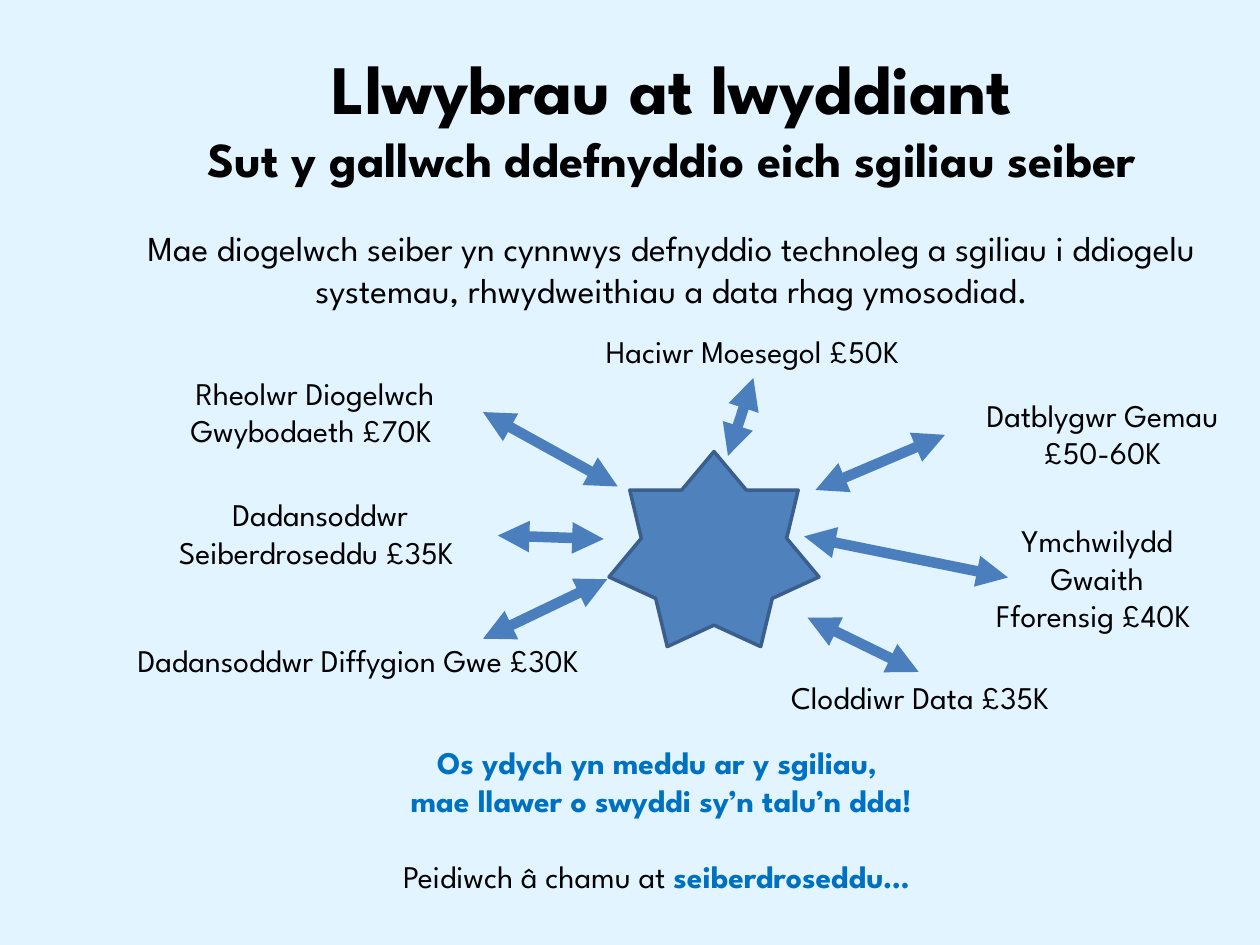
from dataclasses import dataclass

from lxml import etree
from pptx import Presentation
from pptx import util as u
from pptx.dml.color import RGBColor
from pptx.enum import shapes, text
from pptx.oxml import ns

FONT = "League Spartan"
BACKGROUND = RGBColor(0xE1, 0xF4, 0xFF)
BLACK = RGBColor(0, 0, 0)
ACCENT = RGBColor(0x00, 0x70, 0xC0)
STAR_FILL = RGBColor(0x4F, 0x81, 0xBD)
STAR_LINE = RGBColor(0x3A, 0x5F, 0x8C)
ARROW = RGBColor(0x4B, 0x7E, 0xBC)


@dataclass(frozen=True)
class Span:
    words: str
    size: float = 18
    color: RGBColor = BLACK
    bold: bool = False


@dataclass(frozen=True)
class Box:
    left: float
    top: float
    width: float
    height: float


@dataclass(frozen=True)
class Job:
    name: str
    box: Box


@dataclass(frozen=True)
class Arrow:
    x1: float
    y1: float
    x2: float
    y2: float


JOBS = [
    Job("Haciwr Moesegol £50K", Box(314.5, 186, 231, 29)),
    Job("Rheolwr Diogelwch Gwybodaeth £70K ", Box(84, 210, 192, 51)),
    Job("Dadansoddwr Seiberdroseddu £35K ", Box(78, 279.5, 210, 51)),
    Job("Dadansoddwr Diffygion Gwe £30K ", Box(60, 363, 294, 51)),
    Job("Cloddiwr Data £35K ", Box(426, 384, 204, 29)),
    Job("Ymchwilydd Gwaith Fforensig £40K ", Box(558, 294, 138, 73)),
    Job("Datblygwr Gemau £50-60K", Box(540, 222.5, 180, 51)),
]

ARROWS = [
    Arrow(430.5, 216, 416, 260.5),
    Arrow(353, 278, 276, 235.5),
    Arrow(345, 308, 284.5, 306),
    Arrow(276, 365, 347, 331),
    Arrow(525, 384, 461.5, 353),
    Arrow(576, 330, 459.5, 306.5),
    Arrow(540, 248.5, 466, 280),
]


def add_span(para, span: Span) -> None:
    run = para.add_run()
    run.text = span.words
    run.font.name = FONT
    run.font.size = u.Pt(span.size)
    run.font.bold = span.bold
    run.font.color.rgb = span.color


def add_text(page, box: Box, paras: list[list[Span]],
             anchor=text.MSO_ANCHOR.TOP) -> None:
    shape = page.shapes.add_textbox(
        u.Pt(box.left), u.Pt(box.top), u.Pt(box.width), u.Pt(box.height))
    frame = shape.text_frame
    frame.word_wrap = True
    frame.vertical_anchor = anchor
    for index, spans in enumerate(paras):
        para = frame.add_paragraph() if index else frame.paragraphs[0]
        para.alignment = text.PP_ALIGN.CENTER
        for span in spans:
            add_span(para, span)


def add_title(page, box: Box, lines: list[Span]) -> None:
    title = page.shapes.title
    title.left, title.top = u.Pt(box.left), u.Pt(box.top)
    title.width, title.height = u.Pt(box.width), u.Pt(box.height)
    frame = title.text_frame
    frame.auto_size = text.MSO_AUTO_SIZE.NONE
    frame.vertical_anchor = text.MSO_ANCHOR.MIDDLE
    para = frame.paragraphs[0]
    para.alignment = text.PP_ALIGN.CENTER
    for index, span in enumerate(lines):
        if index:
            para.add_line_break()
        add_span(para, span)


def add_star(page, box: Box) -> None:
    star = page.shapes.add_shape(
        shapes.MSO_SHAPE.STAR_7_POINT,
        u.Pt(box.left), u.Pt(box.top), u.Pt(box.width), u.Pt(box.height))
    star.shadow.inherit = False
    star.fill.solid()
    star.fill.fore_color.rgb = STAR_FILL
    star.line.color.rgb = STAR_LINE
    star.line.width = u.Pt(2)


def add_arrow(page, arrow: Arrow) -> None:
    line = page.shapes.add_connector(
        shapes.MSO_CONNECTOR.STRAIGHT,
        u.Pt(arrow.x1), u.Pt(arrow.y1), u.Pt(arrow.x2), u.Pt(arrow.y2))
    line.line.color.rgb = ARROW
    line.line.width = u.Pt(6)
    properties = line.line._get_or_add_ln()
    for end in ("a:headEnd", "a:tailEnd"):
        etree.SubElement(properties, ns.qn(end), type="triangle")
    etree.SubElement(line._element.spPr, ns.qn("a:effectLst"))


def main() -> None:
    deck = Presentation()
    deck.slide_width, deck.slide_height = u.Pt(720), u.Pt(540)
    page = deck.slides.add_slide(deck.slide_layouts.get_by_name("Title Only"))
    page.background.fill.solid()
    page.background.fill.fore_color.rgb = BACKGROUND

    add_title(page, Box(60, 21.5, 648, 90), [
        Span("Llwybrau at lwyddiant", 39.6, bold=True),
        Span("Sut y gallwch ddefnyddio eich sgiliau seiber", 27.9, bold=True),
    ])
    add_text(page, Box(60, 126, 648, 60), [[Span(
        "Mae diogelwch seiber yn cynnwys defnyddio technoleg a sgiliau i "
        "ddiogelu systemau, rhwydweithiau a data rhag ymosodiad.", 20)]])
    add_star(page, Box(348, 258, 120, 111.5))
    for job in JOBS:
        add_text(page, job.box, [[Span(job.name)]])
    for arrow in ARROWS:
        add_arrow(page, arrow)
    add_text(page, Box(198, 421, 360, 51), [
        [Span("Os ydych yn meddu ar y sgiliau, ", color=ACCENT, bold=True)],
        [Span("mae llawer o swyddi sy’n talu’n dda!", color=ACCENT, bold=True)],
    ])
    add_text(page, Box(162, 486, 426, 29), [[
        Span("Peidiwch â chamu at "),
        Span("seiberdroseddu…", color=ACCENT, bold=True),
    ]], text.MSO_ANCHOR.MIDDLE)
    deck.save("out.pptx")


if __name__ == "__main__":
    main()
